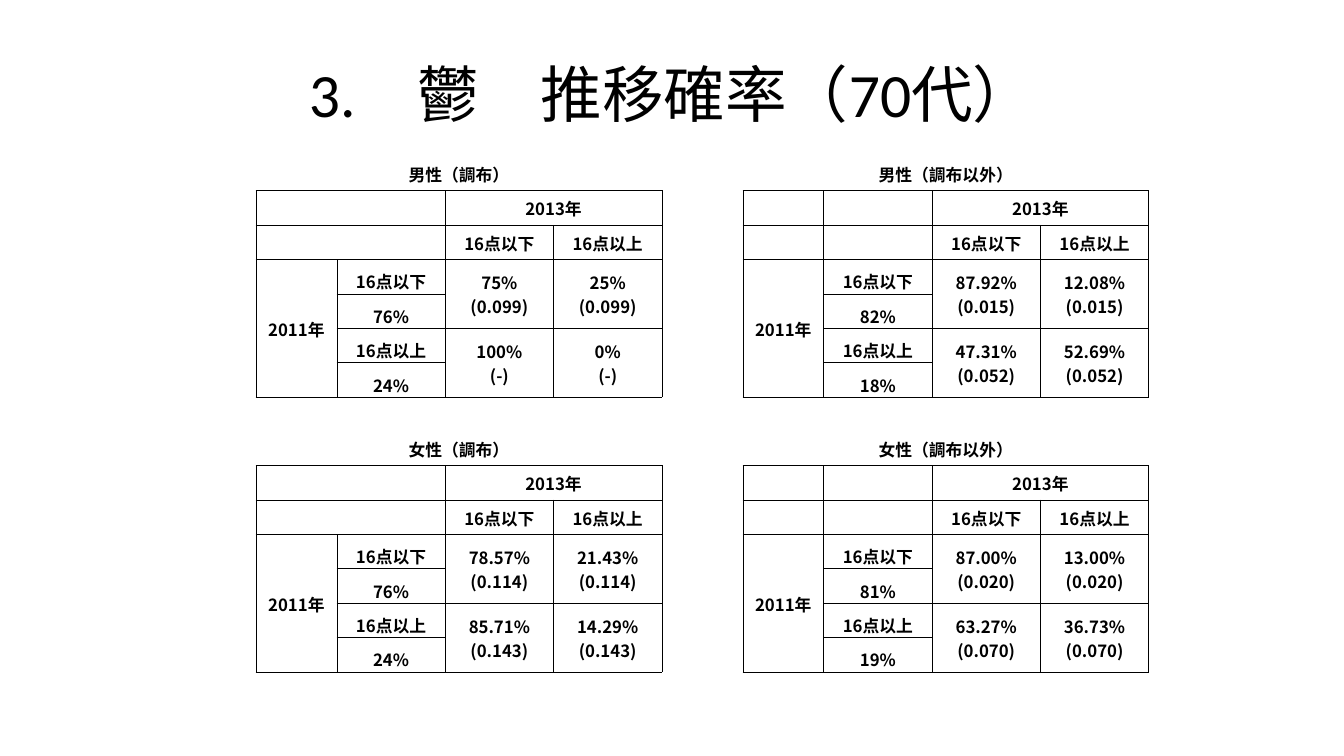
from dataclasses import dataclass

from lxml.etree import SubElement
from pptx import Presentation
from pptx.dml.color import RGBColor
from pptx.enum.text import MSO_ANCHOR, PP_ALIGN
from pptx.oxml.ns import qn
from pptx.slide import Slide
from pptx.table import Table, _Cell
from pptx.text.text import Font
from pptx.util import Cm, Pt

BLACK = "000000"
TABLE_FONT = "Noto Sans CJK JP"
TABLE_SIZE = 12
NO_STYLE = "{2D5ABB26-0587-4C30-8999-92F81FD0307C}"
BLOCK_COLUMNS = [2.04, 2.73, 2.73, 2.73]
COLUMN_WIDTHS = [*BLOCK_COLUMNS, 2.04, *BLOCK_COLUMNS]
ROW_COUNT = 15
TABLE_HEIGHT = 13.0
LEVELS = ["16点以下", "16点以上"]


@dataclass(frozen=True)
class Transition:
    """Share of a 2011 level and its transition cells to the 2013 levels."""
    share: str
    targets: list[str]


@dataclass(frozen=True)
class Block:
    """One titled transition matrix and the cell where it starts."""
    row: int
    column: int
    title: str
    transitions: list[Transition]


@dataclass(frozen=True)
class Entry:
    """A text placed in a block, with its span in rows and columns."""
    row: int
    column: int
    text: str
    rows: int = 1
    columns: int = 1
    anchor: MSO_ANCHOR = MSO_ANCHOR.MIDDLE


BLOCKS = [
    Block(0, 0, "男性（調布）", [
        Transition("76%", ["75%\n(0.099)", "25%\n(0.099)"]),
        Transition("24%", ["100%\n(-)", "0%\n(-)"])]),
    Block(0, 5, "男性（調布以外）", [
        Transition("82%", ["87.92%\n(0.015)", "12.08%\n(0.015)"]),
        Transition("18%", ["47.31%\n(0.052)", "52.69%\n(0.052)"])]),
    Block(8, 0, "女性（調布）", [
        Transition("76%", ["78.57%\n(0.114)", "21.43%\n(0.114)"]),
        Transition("24%", ["85.71%\n(0.143)", "14.29%\n(0.143)"])]),
    Block(8, 5, "女性（調布以外）", [
        Transition("81%", ["87.00%\n(0.020)", "13.00%\n(0.020)"]),
        Transition("19%", ["63.27%\n(0.070)", "36.73%\n(0.070)"])]),
]


def set_attributes(target: object, values: dict) -> None:
    """Set every named attribute of the target."""
    for name, value in values.items():
        setattr(target, name, value)


def format_font(font: Font, name: str, size: float, color: str, bold: bool) -> None:
    """Apply typeface, size, weight and colour."""
    set_attributes(font, {"name": name, "size": Pt(size), "bold": bold})
    font.color.rgb = RGBColor.from_string(color)


def add_title(slide: Slide, text: str) -> None:
    """Place and format the title placeholder."""
    title = slide.shapes.title
    set_attributes(title, {"left": Cm(1.69), "top": Cm(0.76),
                           "width": Cm(30.48), "height": Cm(3.18)})
    title.text_frame.text = text
    title.text_frame.vertical_anchor = MSO_ANCHOR.MIDDLE
    paragraph = title.text_frame.paragraphs[0]
    paragraph.alignment = PP_ALIGN.CENTER
    format_font(paragraph.runs[0].font, "Calibri", 44, BLACK, False)


def add_borders(cell: _Cell, sides: str, color: str) -> None:
    """Draw thin lines on the given sides, ordered L, R, T, B."""
    properties = cell._tc.get_or_add_tcPr()
    for side in sides:
        line = SubElement(properties, qn(f"a:ln{side}"), w=str(Pt(0.5)))
        fill = SubElement(line, qn("a:solidFill"))
        SubElement(fill, qn("a:srgbClr"), val=color)


def block_sides(row: int, column: int) -> str:
    """Return the ruled sides of a block cell, leaving its corner open inside."""
    if row == 0:
        return "B"
    if row <= 2 and column <= 1:
        return "LR"[column] + "TB"[row - 1]
    return "LRTB"


def block_entries(block: Block) -> list[Entry]:
    """List all texts of a block relative to its first cell."""
    entries = [Entry(0, 0, block.title, columns=4),
               Entry(1, 2, "2013年", columns=2),
               Entry(3, 0, "2011年", rows=4)]
    for index, (level, transition) in enumerate(zip(LEVELS, block.transitions)):
        row = 3 + 2 * index
        entries.append(Entry(2, 2 + index, level))
        entries.append(Entry(row, 1, level, anchor=MSO_ANCHOR.BOTTOM))
        entries.append(Entry(row + 1, 1, transition.share, anchor=MSO_ANCHOR.BOTTOM))
        entries += [Entry(row, column, text, rows=2)
                    for column, text in enumerate(transition.targets, 2)]
    return entries


def write_entry(table: Table, block: Block, entry: Entry) -> None:
    """Merge the cells of an entry and write its text."""
    row, column = block.row + entry.row, block.column + entry.column
    cell = table.cell(row, column)
    if entry.rows * entry.columns > 1:
        cell.merge(table.cell(row + entry.rows - 1, column + entry.columns - 1))
    cell.vertical_anchor = entry.anchor
    paragraph = cell.text_frame.paragraphs[0]
    paragraph.text = entry.text
    paragraph.alignment = PP_ALIGN.CENTER
    for run in paragraph.runs:
        format_font(run.font, TABLE_FONT, TABLE_SIZE, BLACK, True)
        SubElement(run.font._element, qn("a:ea"), typeface=TABLE_FONT)
    for line_break in paragraph._p.findall(qn("a:br")):
        SubElement(line_break, qn("a:rPr"), sz=str(TABLE_SIZE * 100))


def add_transition_table(slide: Slide) -> None:
    """Build the table that holds all four matrices."""
    frame = slide.shapes.add_table(ROW_COUNT, len(COLUMN_WIDTHS), Cm(6.45), Cm(3.94),
                                   Cm(sum(COLUMN_WIDTHS)), Cm(TABLE_HEIGHT))
    table = frame.table
    set_attributes(table, {"first_row": False, "horz_banding": False})
    table._tbl.tblPr.find(qn("a:tableStyleId")).text = NO_STYLE
    for column, width in zip(table.columns, COLUMN_WIDTHS):
        column.width = Cm(width)
    for row in table.rows:
        row.height = Cm(TABLE_HEIGHT / ROW_COUNT)
    for block in BLOCKS:
        for row in range(7):
            for column in range(4):
                add_borders(table.cell(block.row + row, block.column + column),
                            block_sides(row, column), BLACK)
        for entry in block_entries(block):
            write_entry(table, block, entry)
    for cell in table.iter_cells():
        set_attributes(cell, {"margin_left": Cm(0.03), "margin_right": Cm(0.03),
                              "margin_top": Cm(0.03), "margin_bottom": Cm(0)})
        cell.fill.background()
        SubElement(cell.text_frame.paragraphs[0]._p, qn("a:endParaRPr"),
                   sz=str(TABLE_SIZE * 100))


def main() -> None:
    """Create the slide and save the presentation."""
    presentation = Presentation()
    set_attributes(presentation, {"slide_width": Cm(33.87), "slide_height": Cm(19.05)})
    slide = presentation.slides.add_slide(presentation.slide_layouts[5])
    add_title(slide, "3.　鬱　推移確率（70代）")
    add_transition_table(slide)
    presentation.save("out.pptx")


if __name__ == "__main__":
    main()
